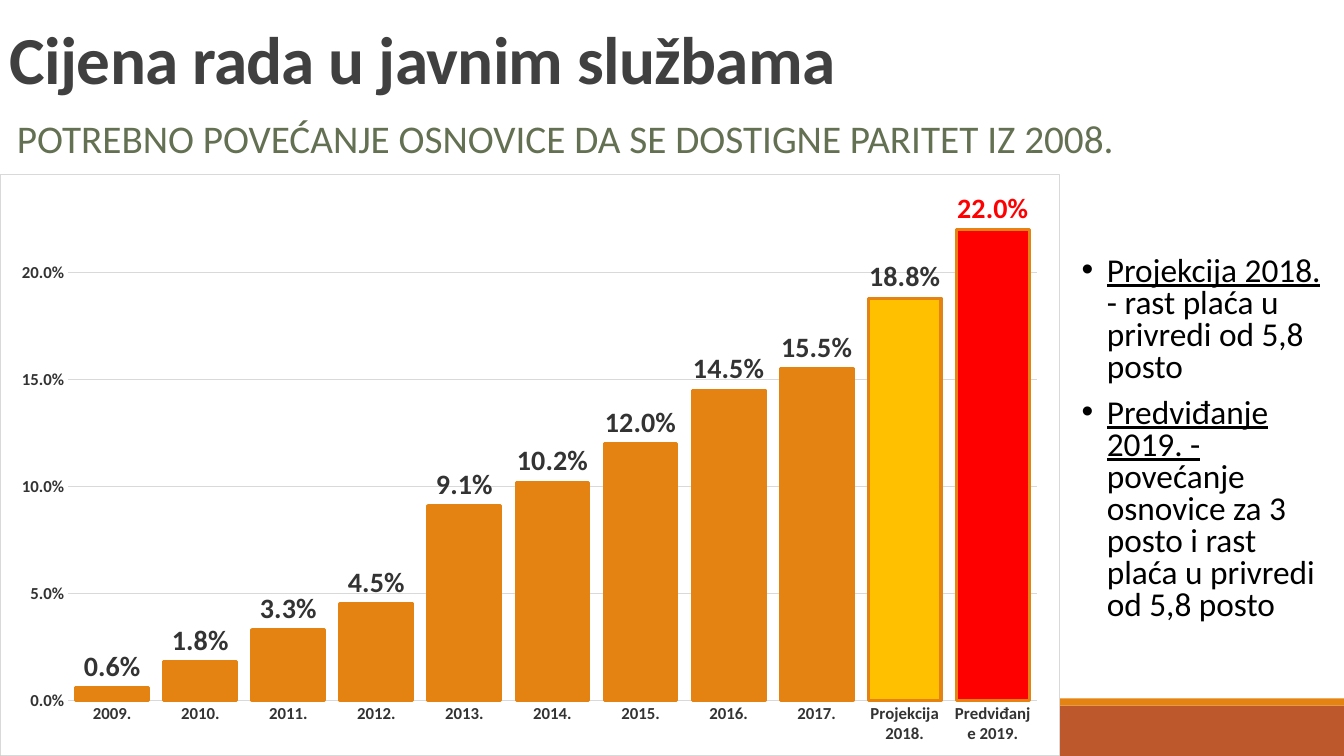
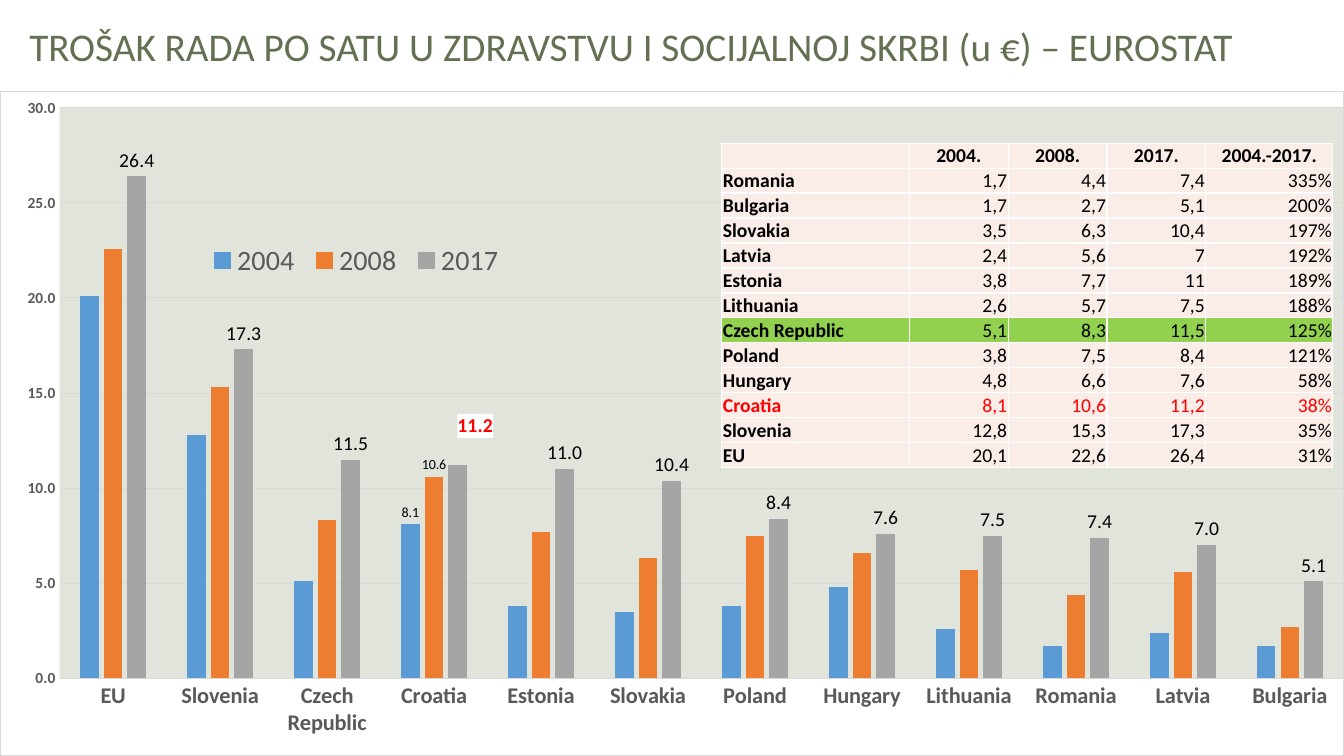
from pptx import Presentation
from pptx.chart.data import CategoryChartData
from pptx.dml.color import RGBColor
from pptx.enum import chart as ce, shapes, text
from pptx.oxml import parse_xml
from pptx.oxml.ns import nsdecls
from pptx.util import Inches, Pt

# Shared look
FONT = "Calibri"
ORANGE, RUST, RED, GOLD = "E48312", "BD582C", "FF0000", "FFC000"
WHITE, BLACK, OLIVE, GRID = "FFFFFF", "000000", "637052", "D9D9D9"
DARK, TITLE_GREY, AXIS_GREY = "333333", "404040", "595959"
PLOT_GREEN, CELL_PINK, CELL_GREEN = "E0E4DB", "FAEDE7", "92D050"
BANDS = [(7, 0.5, RUST), (6.93, 0.07, ORANGE)]
ALIGN = text.PP_ALIGN

# Slide 1 content
TITLE = "Cijena rada u javnim službama"
SUBTITLE = "POTREBNO POVEĆANJE OSNOVICE DA SE DOSTIGNE PARITET IZ 2008."
INCREASES = {
    "2009.": 0.006, "2010.": 0.018, "2011.": 0.033, "2012.": 0.045,
    "2013.": 0.091, "2014.": 0.102, "2015.": 0.12, "2016.": 0.145,
    "2017.": 0.155, "Projekcija 2018.": 0.188, "Predviđanje 2019.": 0.22,
}
FORECAST_FILLS = {9: GOLD, 10: RED}
NOTES = [
    ("Projekcija 2018. ", "- rast plaća u privredi od 5,8 posto"),
    ("Predviđanje 2019. - ",
     "povećanje osnovice za 3 posto i rast plaća u privredi od 5,8 posto"),
]

# Slide 2 content: hourly cost in three years, then growth
COST_TITLE = "TROŠAK RADA PO SATU U ZDRAVSTVU I SOCIJALNOJ SKRBI (u €) – EUROSTAT"
YEARS = {"2004": "5B9BD5", "2008": "ED7D31", "2017": "A5A5A5"}
HEADER = ["", "2004.", "2008.", "2017.", "2004.-2017."]
COSTS = [
    ("Romania", 1.7, 4.4, 7.4, "335%"),
    ("Bulgaria", 1.7, 2.7, 5.1, "200%"),
    ("Slovakia", 3.5, 6.3, 10.4, "197%"),
    ("Latvia", 2.4, 5.6, 7, "192%"),
    ("Estonia", 3.8, 7.7, 11, "189%"),
    ("Lithuania", 2.6, 5.7, 7.5, "188%"),
    ("Czech Republic", 5.1, 8.3, 11.5, "125%"),
    ("Poland", 3.8, 7.5, 8.4, "121%"),
    ("Hungary", 4.8, 6.6, 7.6, "58%"),
    ("Croatia", 8.1, 10.6, 11.2, "38%"),
    ("Slovenia", 12.8, 15.3, 17.3, "35%"),
    ("EU", 20.1, 22.6, 26.4, "31%"),
]
COLUMNS = [1.86, 0.98, 0.98, 0.98, 1.26]
TABLE_HEIGHT = 3.22


def rgb(color):
    return RGBColor.from_string(color)


def xml(prefix, tag, content="", attributes=""):
    return parse_xml(f"<{prefix}:{tag} {nsdecls('a', 'c')} {attributes}>"
                     f"{content}</{prefix}:{tag}>")


def solid(color):
    return f'<a:solidFill><a:srgbClr val="{color}"/></a:solidFill>'


def style_font(font, size, color, bold=False):
    font.name, font.size, font.bold = FONT, Pt(size), bold
    font.color.rgb = rgb(color)


def write(para, content, size=14, color=BLACK, bold=False, underline=False,
          align=None, line=None, spacing=None):
    para.alignment = align
    if line:
        para.line_spacing = line
    if not content:
        para._p.append(xml("a", "endParaRPr", attributes=f'sz="{size * 100}"'))
        return
    span = para.add_run()
    span.text = content
    style_font(span.font, size, color, bold)
    if underline:
        span.font.underline = True
    if spacing:
        span._r.get_or_add_rPr().set("spc", str(int(spacing * 100)))


def add_rect(page, left, top, width, height, fill):
    box = page.shapes.add_shape(shapes.MSO_SHAPE.RECTANGLE, Inches(left),
                                Inches(top), Inches(width), Inches(height))
    box.shadow.inherit = False
    box.fill.solid()
    box.fill.fore_color.rgb = rgb(fill)
    box.line.fill.background()
    return box


def add_page(deck):
    page = deck.slides.add_slide(deck.slide_layouts[6])
    for top, height, color in BANDS:
        add_rect(page, 0, top, 13.33, height, color)
    return page


def add_text_box(page, left, top, width, height, inset=0.1,
                 anchor=text.MSO_ANCHOR.TOP):
    box = page.shapes.add_textbox(Inches(left), Inches(top),
                                  Inches(width), Inches(height))
    frame = box.text_frame
    frame.word_wrap = True
    frame.margin_left = Inches(inset)
    frame.vertical_anchor = anchor
    return frame


def place(parent, index, x, y, width, height, inner=False):
    """Give a chart part a manual layout, in shares of the chart."""
    for old in parent.xpath("c:layout"):
        parent.remove(old)
    target = '<c:layoutTarget val="inner"/>' if inner else ""
    parts = "".join(f'<c:{tag} val="{value}"/>' for tag, value in [
        ("xMode", "edge"), ("yMode", "edge"),
        ("x", x), ("y", y), ("w", width), ("h", height)])
    parent.insert(index, xml(
        "c", "layout", f"<c:manualLayout>{target}{parts}</c:manualLayout>"))


def add_columns(page, area, categories, series, number_format, plot_area,
                gap, overlap, top_value, step, axis_color, axis_sizes):
    """Add a column chart; series is a list of (name, values, colour)."""
    data = CategoryChartData(number_format=number_format)
    data.categories = categories
    for name, values, _ in series:
        data.add_series(name, values)
    chart = page.shapes.add_chart(ce.XL_CHART_TYPE.COLUMN_CLUSTERED,
                                  *map(Inches, area), data).chart
    style_font(chart.font, 10, BLACK)
    chart.has_title = chart.has_legend = False
    plot = chart.plots[0]
    plot.vary_by_categories = False
    plot.gap_width, plot.overlap = gap, overlap
    for item, (_, _, color) in zip(plot.series, series):
        item.format.fill.solid()
        item.format.fill.fore_color.rgb = rgb(color)
        item.invert_if_negative = False

    # Axes, with category labels kept level
    for axis, size in zip((chart.category_axis, chart.value_axis), axis_sizes):
        axis.major_tick_mark = axis.minor_tick_mark = ce.XL_TICK_MARK.NONE
        style_font(axis.tick_labels.font, size, axis_color, True)
    for body in chart.element.xpath("//c:catAx/c:txPr/a:bodyPr"):
        body.set("rot", "0")
        body.set("vert", "horz")
    lines = chart.category_axis.format.line, chart.value_axis.major_gridlines.format.line
    for line in lines:
        line.color.rgb, line.width = rgb(GRID), Pt(0.75)
    values = chart.value_axis
    values.minimum_scale, values.maximum_scale = 0, top_value
    values.major_unit = step
    values.format.line.fill.background()
    values.tick_labels.number_format = number_format
    values.tick_labels.number_format_is_linked = False

    # Chart background, border and plot position
    border = f'<a:ln w="9525">{solid(GRID)}</a:ln>'
    chart.element.xpath("c:chart")[0].addnext(
        xml("c", "spPr", solid(WHITE) + border))
    place(chart.element.xpath("c:chart/c:plotArea")[0], 0, *plot_area, inner=True)
    return chart


def show_values(series, number_format, size, color, bold=False):
    labels = series.data_labels
    labels.show_value = True
    labels.number_format, labels.number_format_is_linked = number_format, False
    labels.position = ce.XL_LABEL_POSITION.OUTSIDE_END
    style_font(labels.font, size, color, bold)


def label_point(series, index, size, color, bold=False):
    label = series.points[index].data_label
    style_font(label.font, size, color, bold)
    label.position = ce.XL_LABEL_POSITION.OUTSIDE_END


def build_increase_page(deck):
    page = add_page(deck)
    frame = add_text_box(page, 0, 0, 13.33, 1.02, anchor=text.MSO_ANCHOR.BOTTOM)
    write(frame.paragraphs[0], TITLE, size=48, color=TITLE_GREY, bold=True,
          line=0.85, spacing=-0.5)
    frame = add_text_box(page, 0.07, 1.14, 11.7, 0.9)
    write(frame.paragraphs[0], SUBTITLE, size=28, color=OLIVE, line=0.9)

    # Bulleted notes
    frame = add_text_box(page, 10.63, 2.5, 2.7, 3.85)
    for index, (lead, rest) in enumerate(NOTES):
        para = frame.add_paragraph() if index else frame.paragraphs[0]
        para.space_before = Pt(10)
        write(para, lead, size=23.8, underline=True, line=0.8)
        write(para, rest, size=23.8, line=0.8)
        props = para._p.get_or_add_pPr()
        props.set("marL", str(Inches(0.25)))
        props.set("indent", str(-Inches(0.25)))
        props.append(xml("a", "buFont", attributes='typeface="Arial"'))
        props.append(xml("a", "buChar", attributes='char="•"'))

    # Chart with highlighted forecasts
    chart = add_columns(
        page, (0, 1.73, 10.51, 5.77), list(INCREASES),
        [("Series 1", list(INCREASES.values()), ORANGE)], "0.0%",
        (0.064, 0.021, 0.915, 0.884), gap=21, overlap=0, top_value=0.24,
        step=0.05, axis_color=DARK, axis_sizes=(12, 12))
    series = chart.plots[0].series[0]
    show_values(series, "0.0%", 20, DARK, True)
    outlined = [series.format]
    for index, color in FORECAST_FILLS.items():
        look = series.points[index].format
        look.fill.solid()
        look.fill.fore_color.rgb = rgb(color)
        outlined.append(look)
    for look in outlined:
        look.line.color.rgb, look.line.width = rgb(ORANGE), Pt(2.25)
    label_point(series, len(INCREASES) - 1, 20, RED, True)


def add_cost_chart(page):
    ranked = sorted(COSTS, key=lambda row: -row[3])
    countries = [row[0] for row in ranked]
    series = [(year, [row[column] for row in ranked], color)
              for column, (year, color) in enumerate(YEARS.items(), 1)]
    chart = add_columns(
        page, (0, 0.9, 13.33, 6.6), countries, series, "#,##0.0",
        (0.044, 0.025, 0.956, 0.859), gap=219, overlap=-27, top_value=30,
        step=5, axis_color=AXIS_GREY, axis_sizes=(16, 11))
    chart.element.xpath("c:chart/c:plotArea")[0].append(
        xml("c", "spPr", solid(PLOT_GREEN)))

    # Legend inside the plot
    chart.has_legend = True
    chart.legend.position = ce.XL_LEGEND_POSITION.BOTTOM
    chart.legend.include_in_layout = False
    style_font(chart.legend.font, 20, AXIS_GREY)
    place(chart.element.xpath("c:chart/c:legend")[0], 1, 0.15, 0.22, 0.23, 0.07)

    # Labels: all of 2017, and every year for Croatia
    croatia = countries.index("Croatia")
    *earlier, latest = chart.plots[0].series
    for item in earlier:
        item.data_labels.show_value = False
        label_point(item, croatia, 10, BLACK)
    show_values(latest, "#,##0.0", 14, BLACK)
    label_point(latest, croatia, 14, RED, True)
    label = chart.element.xpath("//c:ser[last()]/c:dLbls/c:dLbl")[0]
    for old in label.xpath("c:spPr"):
        label.remove(old)
    label.xpath("c:txPr")[0].addprevious(xml("c", "spPr", solid(WHITE)))
    label.xpath("c:idx")[0].addnext(xml(
        "c", "layout", '<c:manualLayout><c:x val="0.013"/>'
        '<c:y val="-0.035"/></c:manualLayout>'))
    for leader in chart.element.xpath("//c:showLeaderLines"):
        leader.set("val", "0")


def add_cost_table(page):
    rows = [HEADER] + [
        [f"{value:g}".replace(".", ",") if isinstance(value, (int, float))
         else value for value in row] for row in COSTS]
    table = page.shapes.add_table(
        len(rows), len(HEADER), Inches(7.16), Inches(1.42),
        Inches(sum(COLUMNS)), Inches(TABLE_HEIGHT)).table
    table.first_row = table.horz_banding = False
    for column, width in zip(table.columns, COLUMNS):
        column.width = Inches(width)
    for r, row in enumerate(rows):
        table.rows[r].height = Inches(TABLE_HEIGHT / len(rows))
        fill = CELL_GREEN if row[0] == "Czech Republic" else CELL_PINK
        color = RED if row[0] == "Croatia" else BLACK
        for c, value in enumerate(row):
            cell = table.cell(r, c)
            cell.margin_left = cell.margin_right = cell.margin_top = Inches(0.01)
            cell.margin_bottom = 0
            cell.vertical_anchor = text.MSO_ANCHOR.BOTTOM
            cell.fill.solid()
            cell.fill.fore_color.rgb = rgb(fill)
            align = ALIGN.CENTER if r == 0 else ALIGN.RIGHT if c else ALIGN.LEFT
            write(cell.text_frame.paragraphs[0], value, color=color,
                  bold=r == 0 or c == 0, align=align)
            for index, side in enumerate("LRTB"):
                cell._tc.get_or_add_tcPr().insert(
                    index, xml("a", f"ln{side}", solid(WHITE), 'w="12700"'))


def build_cost_page(deck):
    page = add_page(deck)
    frame = add_rect(page, 0.09, 0.22, 13.12, 0.58, WHITE).text_frame
    frame.word_wrap = True
    frame.margin_left = Inches(0.2)
    frame.vertical_anchor = text.MSO_ANCHOR.TOP
    write(frame.paragraphs[0], COST_TITLE, size=28, color=OLIVE,
          align=ALIGN.LEFT, line=0.9)
    add_cost_chart(page)
    add_cost_table(page)


def main():
    deck = Presentation()
    deck.slide_width, deck.slide_height = Inches(13.33), Inches(7.5)
    build_increase_page(deck)
    build_cost_page(deck)
    deck.save("out.pptx")


if __name__ == "__main__":
    main()
